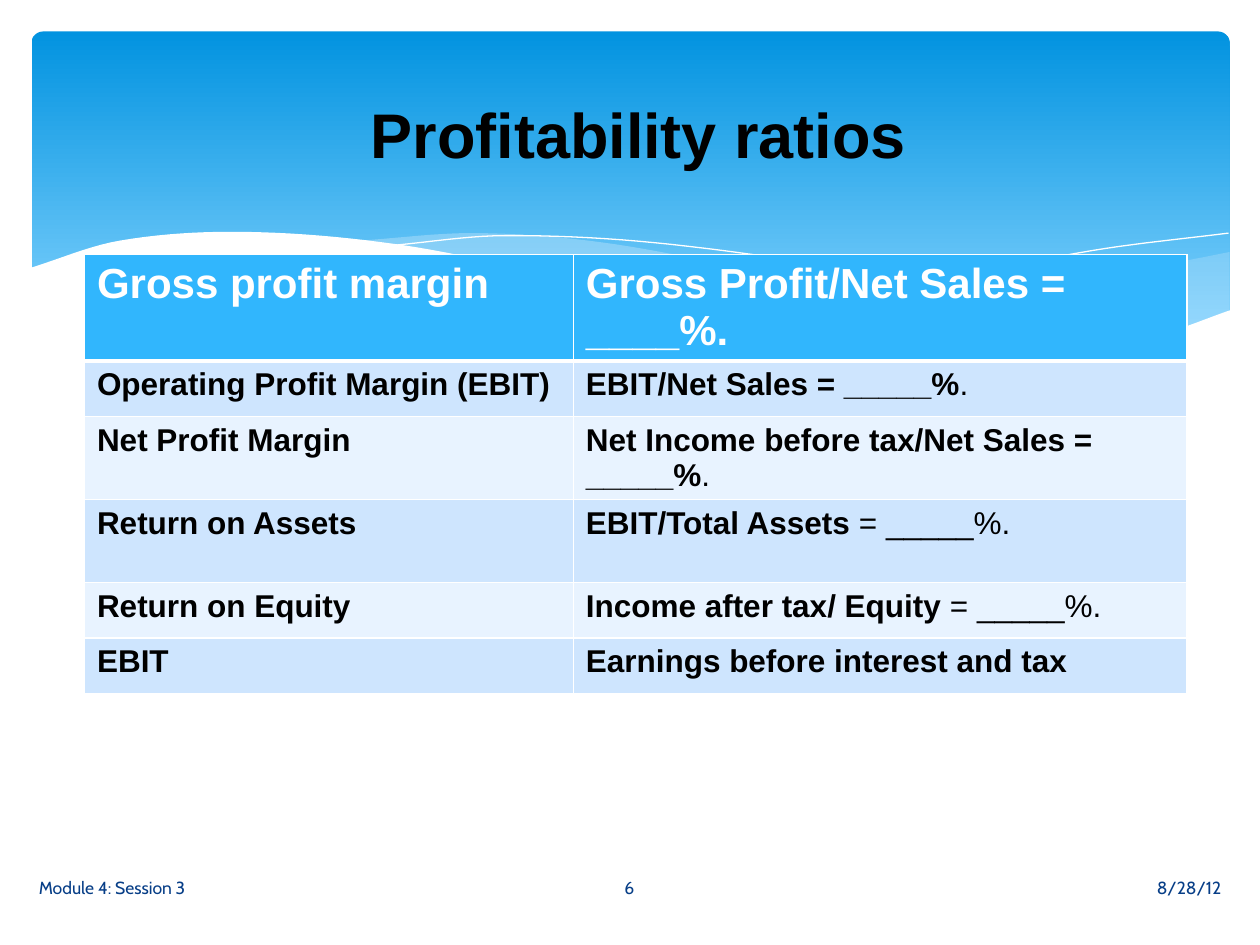
from lxml import etree
from pptx import Presentation
from pptx import util as u
from pptx.dml.color import RGBColor
from pptx.enum import shapes, text
from pptx.oxml import ns

W, H = 10, 7.5
INK = {"top": "0293E0", "base": "83D3FE", "wave": "C6E7FC", "white": "FFFFFF",
       "head": "31B6FD", "odd": "CEE5FE", "even": "E8F3FF",
       "black": "000000", "foot": "073E87"}
TITLE = " Profitability ratios"
# Each row: label, bold part of the formula, plain part
RATIOS = [
    ("Gross profit margin", "Gross Profit/Net Sales = ____%.", ""),
    ("Operating Profit Margin (EBIT)", "EBIT/Net Sales = _____%", "."),
    ("Net Profit Margin", "Net Income before tax/Net Sales = _____%", "."),
    ("Return on Assets", "EBIT/Total Assets", " = _____%."),
    ("Return on Equity", "Income after tax/ Equity", " = _____%."),
    ("EBIT", "Earnings before interest and tax", ""),
]
COLS = [3.88, 4.87]
ROWS = [0.82, 0.44, 0.64, 0.66, 0.44, 0.44]
LEFT, CENTER, RIGHT = text.PP_ALIGN.LEFT, text.PP_ALIGN.CENTER, text.PP_ALIGN.RIGHT
FOOT = [("8/28/12", 5.65, 4.14, RIGHT), ("Module 4: Session 3", 0.21, 4.14, LEFT),
        ("6", 4.36, 1.27, CENTER)]

# Waves from back to front: fill, opacity in percent, arcs to smooth and join
WAVES = [
    ("wave", 29, [[(9.76, 2), (8.61, 2.23), (6.61, 2.65)],
                  [(6.61, 2.65), (8.03, 2.78), (9.05, 2.69), (9.76, 2.47)]]),
    ("wave", 40, [[(8.93, 2.73), (7.75, 2.54), (6.29, 2.22), (4.89, 1.94),
                   (3.8, 1.85), (2.86, 1.91)],
                  [(2.86, 1.91), (4.49, 2.22), (6.34, 2.61), (7.85, 2.78),
                   (8.93, 2.73)]]),
    (None, 100, [[(3.09, 1.95), (4.01, 1.87), (5.33, 1.94), (6.95, 2.19),
                  (9.07, 2.72)]]),
    (None, 100, [[(6.13, 2.57), (7.48, 2.23), (8.66, 1.99), (9.75, 1.85)]]),
    ("white", 100, [[(9.77, 2.46), (9.2, 2.65), (8.23, 2.77), (6.88, 2.68),
                     (4.47, 2.2), (3.16, 1.94), (1.93, 1.84), (0.95, 1.91),
                     (0.23, 2.13)],
                    [(0.23, 3.29), (9.77, 3.29)]]),
]


def tint(name):
    return RGBColor.from_string(INK[name])


def style(run, size, face, ink, bold):
    font = run.font
    font.size, font.name, font.bold = u.Pt(size), face, bold
    font.color.rgb = tint(ink)


def label(slide, words, box, align, *look):
    frame = slide.shapes.add_textbox(*map(u.Inches, box)).text_frame
    frame.word_wrap = True
    frame.vertical_anchor = text.MSO_ANCHOR.MIDDLE
    para = frame.paragraphs[0]
    para.text, para.alignment = words, align
    style(para.runs[0], *look)


def banner(slide):
    box = slide.shapes.add_shape(shapes.MSO_SHAPE.ROUNDED_RECTANGLE,
                                 *map(u.Inches, (0.25, 0.25, 9.51, 2.7)))
    box.adjustments[0] = 0.034
    box.shadow.inherit = False
    box.line.fill.background()
    box.fill.gradient()
    box.fill.gradient_angle = 270
    for stop, name, place in zip(box.fill.gradient_stops, ("top", "base"), (0, 0.9)):
        stop.color.rgb, stop.position = tint(name), place


def smooth(arc, steps=10):
    """Sample a Hermite curve whose slopes follow the neighbouring points."""
    last = len(arc) - 1

    def slope(i):
        (x0, y0), (x1, y1) = arc[max(i - 1, 0)], arc[min(i + 1, last)]
        return (y1 - y0) / (x1 - x0)

    for i in range(last):
        (x0, y0), (x1, y1) = arc[i:i + 2]
        gap = x1 - x0
        for t in (n / steps for n in range(steps)):
            ease = t * t * (3 - 2 * t)
            bend = gap * t * (1 - t) * ((1 - t) * slope(i) - t * slope(i + 1))
            yield x0 + gap * t, y0 + (y1 - y0) * ease + bend
    yield arc[last]


def wave(slide, name, alpha, arcs):
    """Draw a filled wave, or a white hairline when no fill is named."""
    first, *rest = [(u.Inches(x), u.Inches(y)) for arc in arcs for x, y in smooth(arc)]
    pen = slide.shapes.build_freeform(*first)
    pen.add_line_segments(rest, close=bool(name))
    curve = pen.convert_to_shape()
    curve.shadow.inherit = False
    if not name:
        curve.fill.background()
        curve.line.color.rgb, curve.line.width = tint("white"), 0
        return
    curve.line.fill.background()
    curve.fill.solid()
    curve.fill.fore_color.rgb = tint(name)
    if alpha < 100:
        hue = curve._element.spPr.find(".//" + ns.qn("a:srgbClr"))
        etree.SubElement(hue, ns.qn("a:alpha"), val=str(alpha * 1000))


def edge(cell, row):
    """White borders, thicker under the head row."""
    wide = {"T": row == 1, "B": row == 0}
    for side in "LRTB":
        line = etree.SubElement(cell._tc.get_or_add_tcPr(), ns.qn("a:ln" + side),
                                w=str(u.Pt(3 if wide.get(side) else 1)))
        fill = etree.SubElement(line, ns.qn("a:solidFill"))
        etree.SubElement(fill, ns.qn("a:srgbClr"), val=INK["white"])


def grid(slide):
    box = map(u.Inches, (0.67, 2.02, sum(COLS), sum(ROWS)))
    table = slide.shapes.add_table(len(ROWS), len(COLS), *box).table
    for col, wide in zip(table.columns, COLS):
        col.width = u.Inches(wide)
    for r, (name, bold, plain) in enumerate(RATIOS):
        table.rows[r].height = u.Inches(ROWS[r])
        size, ink = (18, "black") if r else (24, "white")
        back = ("odd" if r % 2 else "even") if r else "head"
        for cell, parts in zip(table.rows[r].cells, ([name], [bold, plain])):
            edge(cell, r)
            cell.fill.solid()
            cell.fill.fore_color.rgb = tint(back)
            para = cell.text_frame.paragraphs[0]
            for i, part in enumerate(filter(None, parts)):
                run = para.add_run()
                run.text = part
                style(run, size, "Arial", ink, i == 0)


def main():
    deck = Presentation()
    deck.slide_width, deck.slide_height = u.Inches(W), u.Inches(H)
    slide = deck.slides.add_slide(deck.slide_layouts[6])
    banner(slide)
    for item in WAVES:
        wave(slide, *item)
    grid(slide)
    for words, x, wide, align in FOOT:
        label(slide, words, (x, 6.84, wide, 0.4), align, 10, "Cabin", "foot", False)
    label(slide, TITLE, (0.5, 0.37, 9, 1.37), CENTER, 36, "Arial", "black", True)
    deck.save("out.pptx")


if __name__ == "__main__":
    main()
